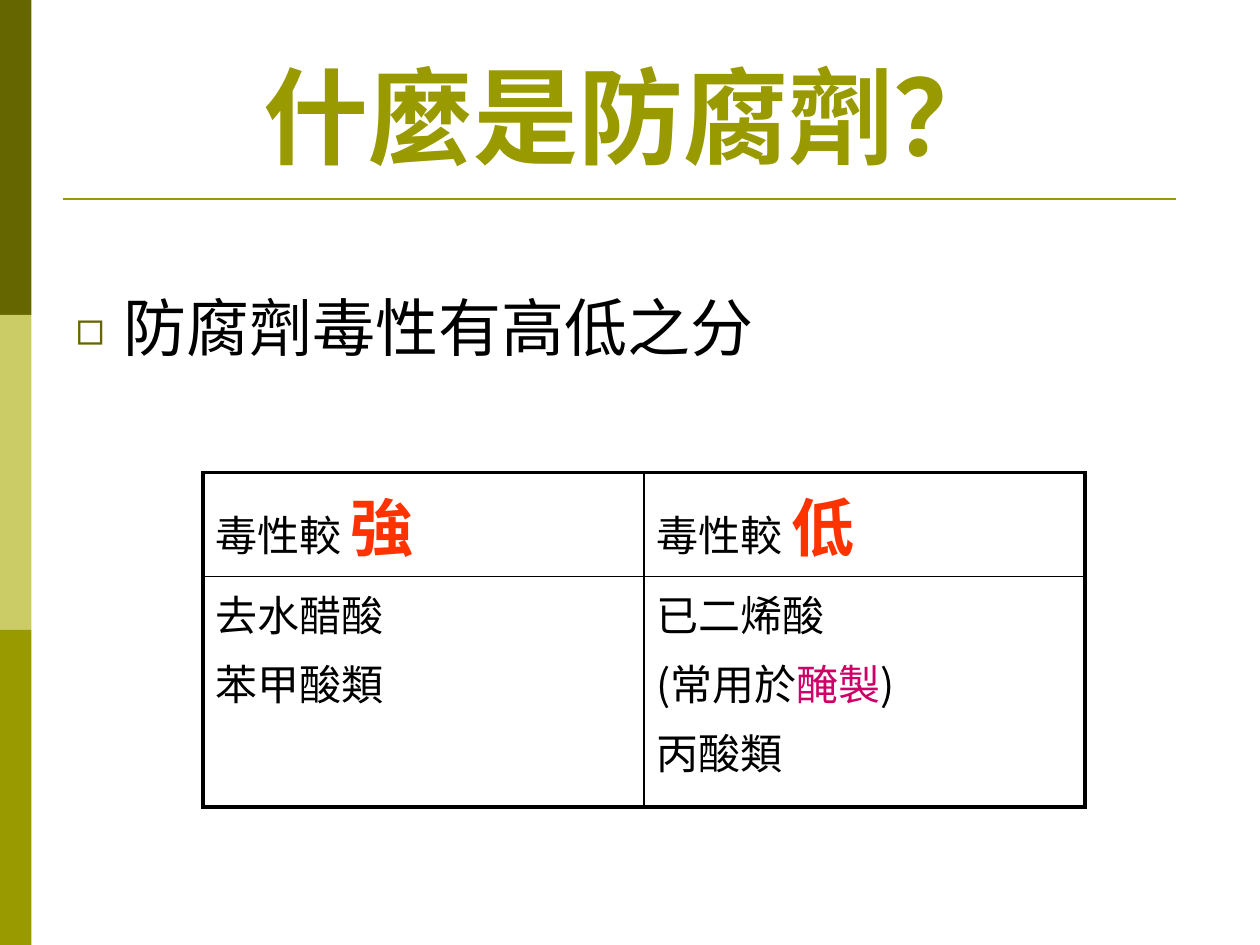
from lxml import etree
from pptx import Presentation
from pptx.dml.color import RGBColor
from pptx.enum.shapes import MSO_CONNECTOR, MSO_SHAPE
from pptx.enum.text import MSO_ANCHOR, MSO_AUTO_SIZE, PP_ALIGN
from pptx.oxml.ns import qn
from pptx.util import Inches, Pt

RECTANGLE = MSO_SHAPE.RECTANGLE
STRAIGHT = MSO_CONNECTOR.STRAIGHT
MIDDLE = MSO_ANCHOR.MIDDLE
TOP = MSO_ANCHOR.TOP
NO_AUTOFIT = MSO_AUTO_SIZE.NONE
CENTER = PP_ALIGN.CENTER
LEFT = PP_ALIGN.LEFT

FONT = "Noto Sans CJK SC"
OLIVE = "999900"
DARK_OLIVE = "666600"
LIGHT_OLIVE = "CCCC66"
BLACK = "000000"
RED = "FF3300"
MAGENTA = "CC0066"


def color(value):
    return RGBColor.from_string(value)


class SlideBuilder:
    def __init__(self, slide):
        self.slide = slide

    def run(self, paragraph, text, size=24, fill=BLACK, bold=False):
        run = paragraph.add_run()
        run.text = text
        font = run.font
        font.size = Pt(size)
        font.bold = bold
        font.color.rgb = color(fill)
        font.name = FONT
        etree.SubElement(run._r.get_or_add_rPr(), qn("a:ea"), typeface=FONT)

    def rectangle(self, left, top, width, height, fill):
        shape = self.slide.shapes.add_shape(
            RECTANGLE, Inches(left), Inches(top), Inches(width), Inches(height))
        shape.shadow.inherit = False
        shape.fill.solid()
        shape.fill.fore_color.rgb = color(fill)
        shape.line.fill.background()

    def rule(self, left, right, top, fill, width):
        connector = self.slide.shapes.add_connector(
            STRAIGHT, Inches(left), Inches(top), Inches(right), Inches(top))
        connector.line.color.rgb = color(fill)
        connector.line.width = Pt(width)
        etree.SubElement(connector._element.spPr, qn("a:effectLst"))

    def place(self, placeholder, left, top, width, height, anchor):
        placeholder.left, placeholder.top = Inches(left), Inches(top)
        placeholder.width, placeholder.height = Inches(width), Inches(height)
        frame = placeholder.text_frame
        frame.word_wrap = True
        frame.auto_size = NO_AUTOFIT
        frame.vertical_anchor = anchor
        return frame

    def title(self, text):
        frame = self.place(self.slide.shapes.title, 0.51, 0.28, 9, 1.25, MIDDLE)
        paragraph = frame.paragraphs[0]
        paragraph.alignment = CENTER
        self.run(paragraph, text, 60, OLIVE, True)

    def body(self, text):
        frame = self.place(self.slide.placeholders[1], 0.5, 1.75, 9, 4.95, TOP)
        frame.margin_top = Inches(0.54)
        paragraph = frame.paragraphs[0]
        paragraph.alignment = LEFT
        paragraph.space_before = Pt(0)
        properties = paragraph._p.get_or_add_pPr()
        properties.set("marL", str(Inches(0.38)))
        properties.set("indent", str(-Inches(0.38)))
        bullet_color = etree.SubElement(properties, qn("a:buClr"))
        etree.SubElement(bullet_color, qn("a:srgbClr"), val=DARK_OLIVE)
        etree.SubElement(properties, qn("a:buSzPct"), val="75000")
        etree.SubElement(properties, qn("a:buFont"), typeface=FONT)
        etree.SubElement(properties, qn("a:buChar"), char="◻")
        self.run(paragraph, text, 36)

    def borders(self, cell, widths):
        properties = cell._tc.get_or_add_tcPr()
        for index, (side, width) in enumerate(widths.items()):
            line = etree.Element(qn(f"a:ln{side}"), w=str(Pt(width)))
            fill = etree.SubElement(line, qn("a:solidFill"))
            etree.SubElement(fill, qn("a:srgbClr"), val=BLACK)
            properties.insert(index, line)

    def table(self, left, top, column_width, row_heights, rows):
        row_count, column_count = len(rows), len(rows[0])
        table = self.slide.shapes.add_table(
            row_count, column_count, Inches(left), Inches(top),
            Inches(column_width * column_count), Inches(sum(row_heights))).table
        table.first_row = False
        table.horz_banding = False
        for column in table.columns:
            column.width = Inches(column_width)
        for row_index, row in enumerate(rows):
            table.rows[row_index].height = Inches(row_heights[row_index])
            for column_index, lines in enumerate(row):
                cell = table.cell(row_index, column_index)
                cell.fill.background()
                self.borders(cell, {
                    "L": 2.25 if column_index == 0 else 1,
                    "R": 2.25 if column_index == column_count - 1 else 1,
                    "T": 2.25 if row_index == 0 else 1,
                    "B": 2.25 if row_index == row_count - 1 else 1,
                })
                self.cell_text(cell.text_frame, lines)

    def cell_text(self, frame, lines):
        for index, runs in enumerate(lines):
            paragraph = frame.add_paragraph() if index else frame.paragraphs[0]
            paragraph.space_before = Pt(4.8)
            for run in runs:
                self.run(paragraph, *run)


def main():
    presentation = Presentation()
    presentation.slide_width = Inches(10)
    presentation.slide_height = Inches(7.5)
    slide = presentation.slides.add_slide(presentation.slide_layouts[1])
    builder = SlideBuilder(slide)

    for index, fill in enumerate((DARK_OLIVE, LIGHT_OLIVE, OLIVE)):
        builder.rectangle(0, index * 2.5, 0.25, 2.5, fill)
    builder.rule(0.5, 9.33, 1.58, OLIVE, 1.5)
    builder.title("什麼是防腐劑？")
    builder.body("防腐劑毒性有高低之分")

    headers = [[[("毒性較 ",), (level, 36, RED, True)]] for level in "強低"]
    stronger = [[("去水醋酸",)], [("苯甲酸類",)]]
    weaker = [
        [("已二烯酸",)],
        [("(常用於",), ("醃製", 24, MAGENTA), (")",)],
        [("丙酸類",)],
    ]
    builder.table(1.61, 3.75, 3.5, (0.77, 1.83), [headers, [stronger, weaker]])
    presentation.save("out.pptx")


if __name__ == "__main__":
    main()
